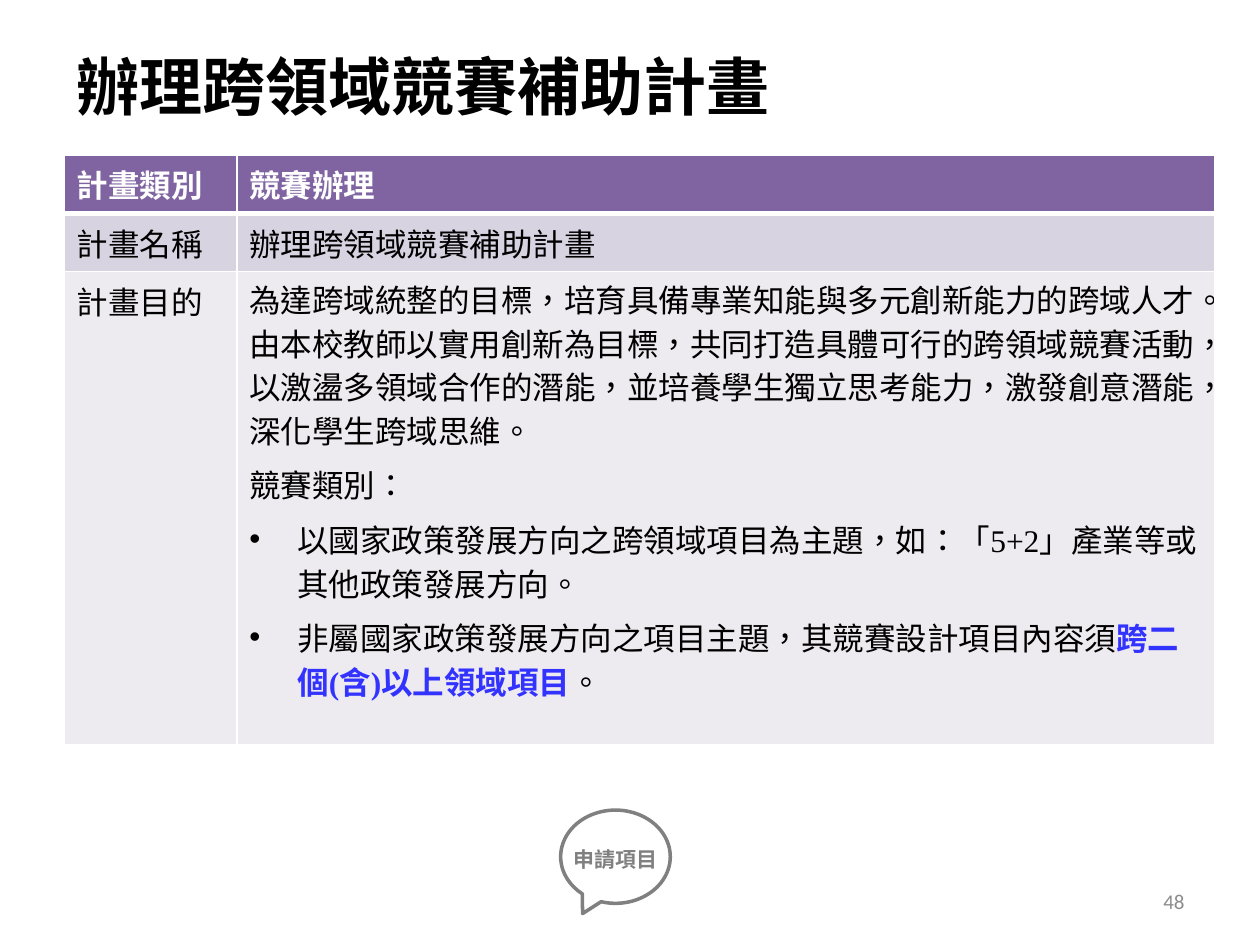
from dataclasses import dataclass

from pptx import Presentation
from pptx.dml.color import RGBColor
from pptx.enum.shapes import MSO_SHAPE
from pptx.enum.text import MSO_ANCHOR, PP_ALIGN
from pptx.oxml import parse_xml
from pptx.oxml.ns import nsdecls, qn
from pptx.util import Inches, Pt


@dataclass(frozen=True)
class Theme:
    header: str = "8064A2"
    band: str = "D8D3E0"
    body: str = "EDEAF0"
    white: str = "FFFFFF"
    black: str = "000000"
    accent: str = "3333FF"
    callout: str = "808080"
    number: str = "8C8C8C"
    serif: str = "Times New Roman"
    sans: str = "Noto Sans CJK SC"
    latin: str = "Calibri"
    title_size: int = 36
    table_size: int = 18
    small_size: int = 12


theme = Theme()
presentation = Presentation()
presentation.slide_width, presentation.slide_height = Inches(10), Inches(7.5)
slide = presentation.slides.add_slide(presentation.slide_layouts[6])


def area(left, top, width, height):
    """Turn percentages of the slide into a position and size."""
    across, down = presentation.slide_width / 100, presentation.slide_height / 100
    return int(left * across), int(top * down), int(width * across), int(height * down)


def add_run(paragraph, text, font_name, size, color, bold=False):
    run = paragraph.add_run()
    run.text = text
    run.font.name, run.font.size, run.font.bold = font_name, Pt(size), bold
    run.font.color.rgb = RGBColor.from_string(color)
    properties = run._r.get_or_add_rPr()
    properties.set("lang", "zh-TW")
    properties.find(qn("a:latin")).addnext(
        parse_xml(f'<a:ea {nsdecls("a")} typeface="{theme.sans}"/>'))


# Table: every paragraph is (bulleted, [(text, highlighted), ...])
purpose = [
    (False, [("為達跨域統整的目標，培育具備專業知能與多元創新能力的跨域人才。"
              "由本校教師以實用創新為目標，共同打造具體可行的跨領域競賽活動，"
              "以激盪多領域合作的潛能，並培養學生獨立思考能力，激發創意潛能，"
              "深化學生跨域思維。", False)]),
    (False, [("競賽類別：", False)]),
    (True, [("以國家政策發展方向之跨領域項目為主題，如：「5+2」產業等或其他政策發展方向。", False)]),
    (True, [("非屬國家政策發展方向之項目主題，其競賽設計項目內容須", False),
            ("跨二個(含)以上領域項目", True), ("。", False)]),
]
rows = [
    ("計畫類別", [(False, [("競賽辦理", False)])], theme.header),
    ("計畫名稱", [(False, [("辦理跨領域競賽補助計畫", False)])], theme.band),
    ("計畫目的", purpose, theme.body),
]
table = slide.shapes.add_table(3, 2, *area(5.1, 16.4, 91.3, 59.73)).table
table.horz_banding = False
for column, share in zip(table.columns, (13.7, 77.6)):
    column.width = int(presentation.slide_width * share / 100)
for row, share in zip(table.rows, (4.8, 4.8, 50.13)):
    row.height = int(presentation.slide_height * share / 100)

for row_index, (label, content, fill) in enumerate(rows):
    is_header = row_index == 0
    text_color = theme.white if is_header else theme.black
    for column_index, paragraphs in enumerate(([(False, [(label, False)])], content)):
        cell = table.cell(row_index, column_index)
        cell_properties = cell._tc.get_or_add_tcPr()
        for side in ("L", "R", "T", "B"):
            thick = (is_header and side == "B") or (row_index == 1 and side == "T")
            cell_properties.append(parse_xml(
                f'<a:ln{side} {nsdecls("a")} w="{Pt(3 if thick else 1)}"><a:solidFill>'
                f'<a:srgbClr val="{theme.white}"/></a:solidFill></a:ln{side}>'))
        cell.fill.solid()
        cell.fill.fore_color.rgb = RGBColor.from_string(fill)
        for index, (bulleted, pieces) in enumerate(paragraphs):
            text_frame = cell.text_frame
            paragraph = text_frame.add_paragraph() if index else text_frame.paragraphs[0]
            if bulleted:
                paragraph_properties = paragraph._p.get_or_add_pPr()
                paragraph_properties.set("marL", str(Inches(0.38)))
                paragraph_properties.set("indent", str(-Inches(0.38)))
                for bullet in ('<a:buFont {} typeface="Arial"/>', '<a:buChar {} char="•"/>'):
                    paragraph_properties.append(parse_xml(bullet.format(nsdecls("a"))))
            if len(paragraphs) > 1:
                paragraph.line_spacing = Pt(25)
            if index:
                paragraph.space_before = Pt(6)
            for text, highlighted in pieces:
                add_run(paragraph, text, theme.serif, theme.table_size,
                        theme.accent if highlighted else text_color,
                        is_header or highlighted)

# Title, page number and callout label
callout = slide.shapes.add_group_shape()
labels = [
    (slide.shapes, (5.1, 3.87, 63.1, 10.27), "辦理跨領域競賽補助計畫", theme.sans,
     theme.title_size, theme.black, True, MSO_ANCHOR.MIDDLE, PP_ALIGN.LEFT),
    (slide.shapes, (71.7, 92.67, 23.3, 5.33), "48", theme.latin,
     theme.small_size, theme.number, False, MSO_ANCHOR.MIDDLE, PP_ALIGN.RIGHT),
    (callout.shapes, (44.5, 88.93, 8.8, 4), "申請項目", theme.sans,
     theme.small_size, theme.callout, True, MSO_ANCHOR.TOP, PP_ALIGN.LEFT),
]
for shapes, place, text, font_name, size, color, bold, anchor, alignment in labels:
    text_frame = shapes.add_textbox(*area(*place)).text_frame
    text_frame.word_wrap = True
    text_frame.vertical_anchor = anchor
    text_frame.paragraphs[0].alignment = alignment
    add_run(text_frame.paragraphs[0], text, font_name, size, color, bold)

# Speech bubble around the label
bubble = callout.shapes.add_shape(MSO_SHAPE.OVAL_CALLOUT, *area(44.5, 85.73, 8.7, 9.87))
bubble.adjustments[0], bubble.adjustments[1] = -0.3, 0.61
bubble.shadow.inherit = False
bubble.fill.background()
bubble.line.color.rgb = RGBColor.from_string(theme.callout)
bubble.line.width = Pt(2)

presentation.save("out.pptx")
